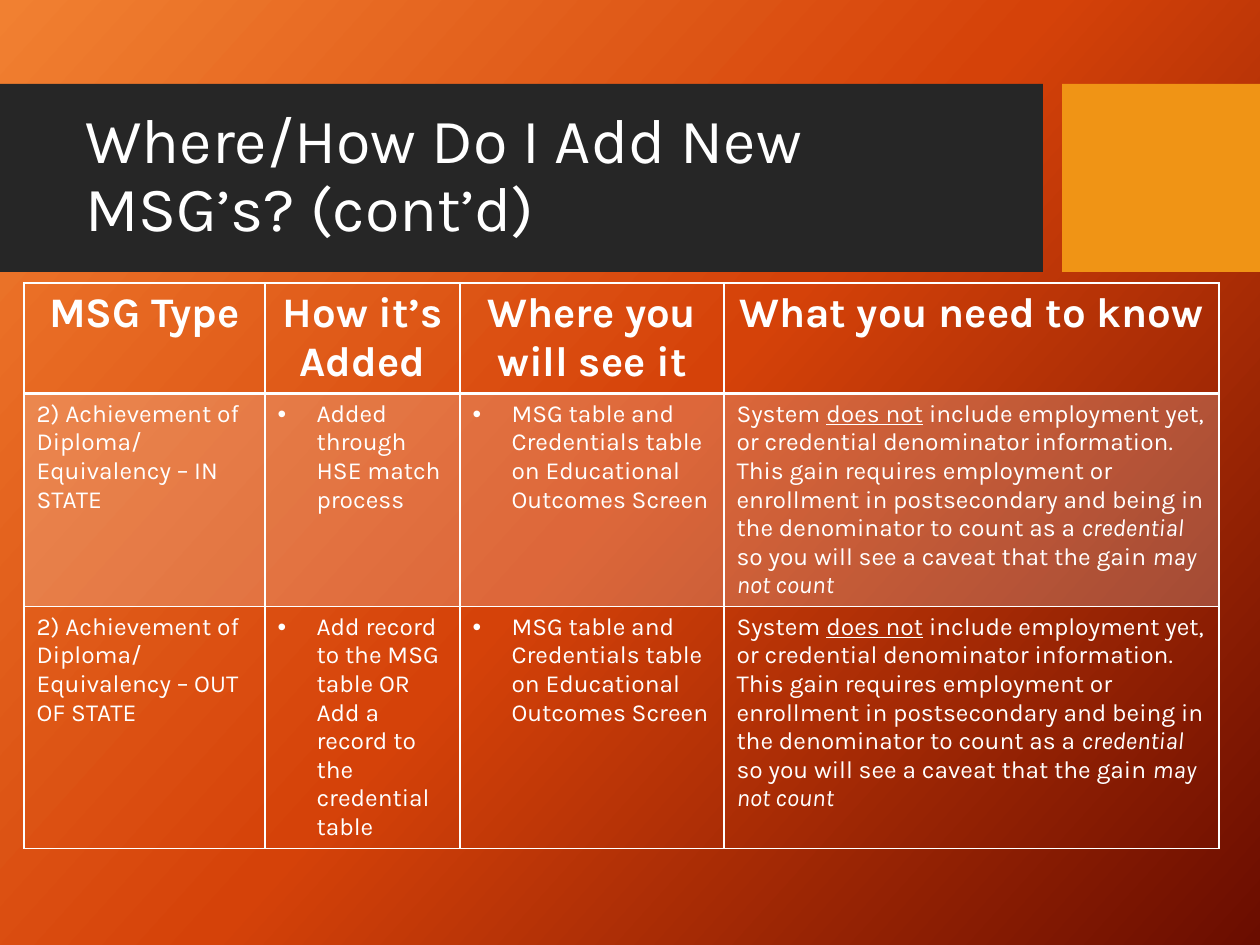
"""Build the slide on where and how new MSG's are added."""
from copy import deepcopy
from dataclasses import dataclass

from lxml.etree import SubElement
from pptx import Presentation
from pptx.dml.color import RGBColor
from pptx.enum.shapes import MSO_SHAPE as Shape
from pptx.enum.text import MSO_ANCHOR as Anchor, MSO_AUTO_SIZE as AutoSize, PP_ALIGN as Align
from pptx.oxml.ns import qn
from pptx.slide import Slide
from pptx.table import _Cell as Cell
from pptx.text.text import _Paragraph as Paragraph
from pptx.util import Emu, Pt

WHITE = RGBColor(0xFF, 0xFF, 0xFF)
CHARCOAL = RGBColor(0x26, 0x26, 0x26)
AMBER = RGBColor(0xF0, 0x94, 0x15)
GRADIENT = (
    (0, RGBColor(0xF1, 0x80, 0x31)),
    (0.5, RGBColor(0xD5, 0x42, 0x09)),
    (1, RGBColor(0x6A, 0x0D, 0x00)),
)
FONT = "Karla"
PX_PER_INCH = 126
BULLET_INDENT = 39


@dataclass(frozen=True)
class Box:
    left: int
    top: int
    width: int
    height: int


@dataclass(frozen=True)
class Span:
    text: str
    underline: bool = False
    italic: bool = False


@dataclass(frozen=True)
class Gain:
    kind: str
    how_added: str
    where_seen: str
    height: int
    tinted: bool


@dataclass(frozen=True)
class Band:
    box: Box
    color: RGBColor


BANDS = (
    Band(Box(0, 84, 1043, 188), CHARCOAL),
    Band(Box(1062, 84, 198, 188), AMBER),
)
TITLE_BOX = Box(73, 103, 950, 149)
TABLE_BOX = Box(24, 283, 1195, 565)
COLUMN_WIDTHS = (241, 195, 264, 495)
HEADER_HEIGHT = 110
HEADINGS = ("MSG Type", "How it’s Added", "Where you will see it", "What you need to know")
SCREEN = "MSG table and Credentials table on Educational Outcomes Screen"
GAINS = (
    Gain("2) Achievement of Diploma/ Equivalency – IN STATE",
         "Added through HSE match process", SCREEN, 213, True),
    Gain("2) Achievement of Diploma/ Equivalency – OUT OF STATE",
         "Add record to the MSG table OR\nAdd a record to the credential table", SCREEN, 242, False),
)
CAVEAT = (
    Span("System "),
    Span("does not", underline=True),
    Span(" include employment yet, or credential denominator information.  This gain requires "
         "employment or enrollment in postsecondary and being in the denominator to count as a "),
    Span("credential", italic=True),
    Span(" so you will see a caveat that the gain "),
    Span("may not count", italic=True),
)


def px(length: int) -> Emu:
    """Turn pixels into EMU."""
    return Emu(round(length * 914400 / PX_PER_INCH))


def frame(box: Box) -> tuple[Emu, ...]:
    """Return the box's left, top, width and height in EMU."""
    return px(box.left), px(box.top), px(box.width), px(box.height)


def set_font(paragraph: Paragraph, size: int, bold: bool = False) -> None:
    """Give a paragraph the slide's white font."""
    font = paragraph.font
    font.name, font.size, font.bold = FONT, Pt(size), bold
    font.color.rgb = WHITE


def paint_background(slide: Slide) -> None:
    """Fill the background with the diagonal gradient."""
    fill = slide.background.fill
    fill.gradient()
    stop_list = slide.element.find(f".//{qn('a:gsLst')}")
    stop_list.append(deepcopy(stop_list[0]))
    for stop, (position, color) in zip(fill.gradient_stops, GRADIENT):
        stop.position = position
        stop.color.rgb = color
    fill.gradient_angle = 360 - 42


def draw_band(slide: Slide, band: Band) -> None:
    """Draw one flat block of the title strip."""
    block = slide.shapes.add_shape(Shape.RECTANGLE, *frame(band.box))
    block.shadow.inherit = False
    block.fill.solid()
    block.fill.fore_color.rgb = band.color
    block.line.fill.background()


def write_title(slide: Slide, wording: str) -> None:
    """Place and format the title placeholder above the bands."""
    title = slide.shapes.title
    title.left, title.top, title.width, title.height = frame(TITLE_BOX)
    slide.shapes._spTree.append(title._element)
    title.text_frame.auto_size = AutoSize.NONE
    title.text_frame.word_wrap = True
    title.text_frame.vertical_anchor = Anchor.MIDDLE
    paragraph = title.text_frame.paragraphs[0]
    paragraph.text = wording
    paragraph.alignment = Align.LEFT
    paragraph.line_spacing = 0.9
    set_font(paragraph, 36)


def style_cell(cell: Cell, tinted: bool, bottom: int = 1, top: int = 1) -> None:
    """Set a cell's fill and its white borders, widths in points."""
    properties = cell._tc.get_or_add_tcPr()
    if tinted:
        cell.fill.solid()
        cell.fill.fore_color.rgb = WHITE
        SubElement(properties.find(f".//{qn('a:srgbClr')}"), qn("a:alpha"), val="20000")
    else:
        cell.fill.background()
    for index, (side, width) in enumerate((("L", 1), ("R", 1), ("T", top), ("B", bottom))):
        border = SubElement(properties, qn(f"a:ln{side}"), w=str(Pt(width)))
        SubElement(SubElement(border, qn("a:solidFill")), qn("a:srgbClr"), val=str(WHITE))
        properties.insert(index, border)


def write_cell(cell: Cell, wording: str, bulleted: bool = False) -> None:
    """Write plain or bulleted body text into a cell."""
    paragraph = cell.text_frame.paragraphs[0]
    paragraph.text = wording
    if bulleted:
        properties = paragraph._p.get_or_add_pPr()
        properties.set("marL", str(px(BULLET_INDENT)))
        properties.set("indent", str(-px(BULLET_INDENT)))
        SubElement(properties, qn("a:buFont"), typeface="Arial")
        SubElement(properties, qn("a:buChar"), char="•")
    set_font(paragraph, 14)


def write_caveat(cell: Cell) -> None:
    """Write the caveat with its underlined and italic spans."""
    paragraph = cell.text_frame.paragraphs[0]
    set_font(paragraph, 14)
    for span in CAVEAT:
        run = paragraph.add_run()
        run.text = span.text
        if span.underline:
            run.font.underline = True
        if span.italic:
            run.font.italic = True


def draw_table(slide: Slide) -> None:
    """Draw the table of gains."""
    table = slide.shapes.add_table(len(GAINS) + 1, len(HEADINGS), *frame(TABLE_BOX)).table
    table.horz_banding = False
    for column, width in zip(table.columns, COLUMN_WIDTHS):
        column.width = px(width)
    table.rows[0].height = px(HEADER_HEIGHT)
    for cell, heading in zip(table.rows[0].cells, HEADINGS):
        paragraph = cell.text_frame.paragraphs[0]
        paragraph.text = heading
        paragraph.alignment = Align.CENTER
        set_font(paragraph, 24, bold=True)
        style_cell(cell, tinted=False, bottom=2)
    for number, gain in enumerate(GAINS, start=1):
        row = table.rows[number]
        row.height = px(gain.height)
        kind, how_added, where_seen, caveat = row.cells
        write_cell(kind, gain.kind)
        write_cell(how_added, gain.how_added, bulleted=True)
        write_cell(where_seen, gain.where_seen, bulleted=True)
        write_caveat(caveat)
        for cell in row.cells:
            style_cell(cell, gain.tinted, top=2 if number == 1 else 1)


def main() -> None:
    """Build and save the slide."""
    deck = Presentation()
    deck.slide_width, deck.slide_height = px(1260), px(945)
    slide = deck.slides.add_slide(deck.slide_layouts[5])
    paint_background(slide)
    for band in BANDS:
        draw_band(slide, band)
    write_title(slide, "Where/How Do I Add New MSG’s? (cont’d)")
    draw_table(slide)
    deck.save("out.pptx")


if __name__ == "__main__":
    main()
